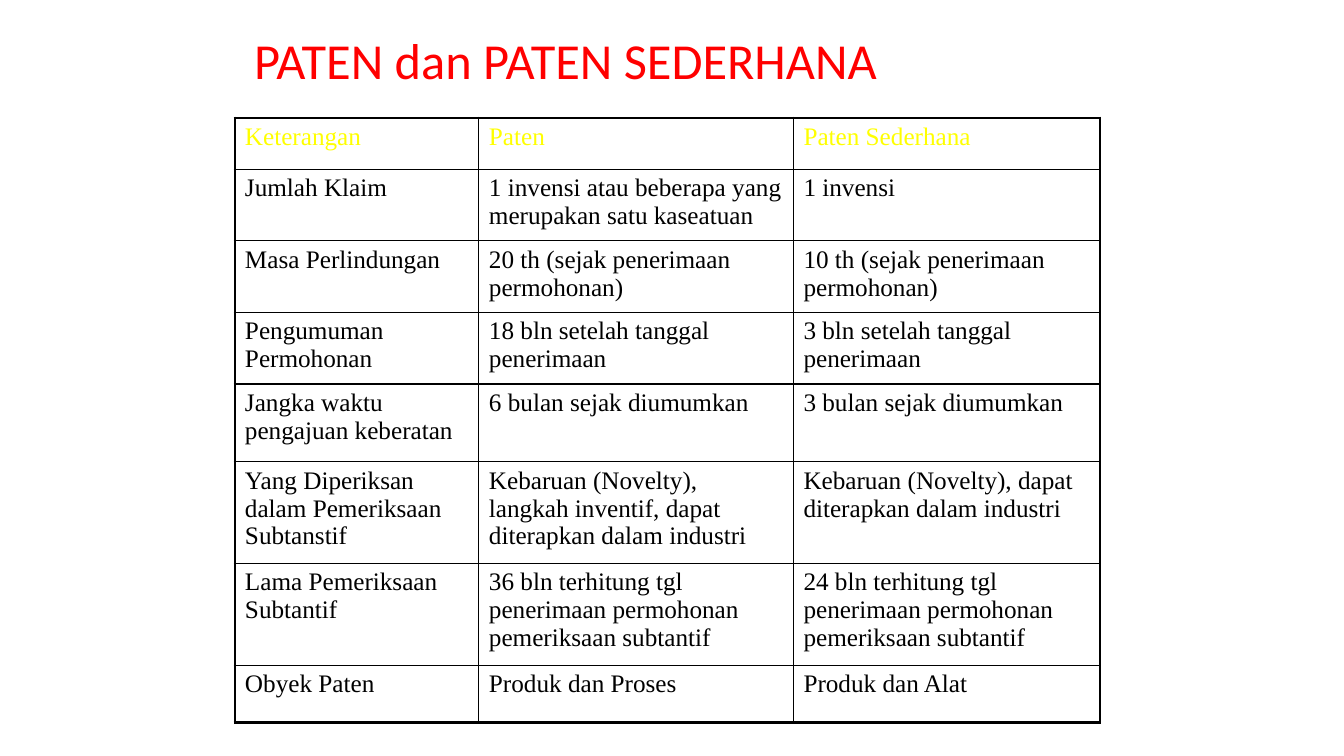
from lxml.etree import SubElement
from pptx import Presentation
from pptx.dml.color import RGBColor
from pptx.enum.text import MSO_ANCHOR, MSO_AUTO_SIZE, PP_ALIGN
from pptx.oxml.ns import qn
from pptx.util import Emu, Pt

PX = 9144  # 100 px to the inch
RED = RGBColor(0xFF, 0x00, 0x00)
YELLOW = RGBColor(0xFF, 0xFF, 0x00)
BLACK = RGBColor(0x00, 0x00, 0x00)

THIN, THICK = 1, 2.25
COLUMN_WIDTHS = [242, 312, 304]
ROW_HEIGHTS = [51, 71, 71, 71, 77, 101, 101, 57]
COMPARISON = [
    ("Keterangan", "Paten", "Paten Sederhana"),
    ("Jumlah Klaim", "1 invensi atau beberapa yang merupakan satu kaseatuan",
     "1 invensi"),
    ("Masa Perlindungan", "20 th (sejak penerimaan permohonan)",
     "10 th (sejak penerimaan permohonan)"),
    ("Pengumuman Permohonan", "18 bln setelah tanggal penerimaan",
     "3 bln setelah tanggal penerimaan"),
    ("Jangka waktu pengajuan keberatan", "6 bulan sejak diumumkan",
     "3 bulan sejak diumumkan"),
    ("Yang Diperiksan dalam Pemeriksaan Subtanstif",
     "Kebaruan (Novelty), langkah inventif, dapat diterapkan dalam industri",
     "Kebaruan (Novelty), dapat diterapkan dalam industri"),
    ("Lama Pemeriksaan Subtantif",
     "36 bln terhitung tgl penerimaan permohonan pemeriksaan subtantif",
     "24 bln terhitung tgl penerimaan permohonan pemeriksaan subtantif"),
    ("Obyek Paten", "Produk dan Proses", "Produk dan Alat"),
]


def px(*lengths):
    return [Emu(length * PX) for length in lengths]


def format_span(span, font, size, colour):
    span.font.name = font
    span.font.size = Pt(size)
    span.font.color.rgb = colour


def set_title(page, text):
    title = page.shapes.title
    title.left, title.top, title.width, title.height = px(242, 0, 850, 125)
    frame = title.text_frame
    frame.text = text
    frame.auto_size = MSO_AUTO_SIZE.NONE
    frame.vertical_anchor = MSO_ANCHOR.MIDDLE
    para = frame.paragraphs[0]
    para.alignment = PP_ALIGN.LEFT
    para.line_spacing = 0.9
    format_span(para.runs[0], "Calibri", 36, RED)


def set_border(cell, side, width):
    """Draw one black cell edge; side is L, R, T or B."""
    properties = cell._tc.get_or_add_tcPr()
    line = SubElement(properties, qn(f"a:ln{side}"), w=str(Pt(width)))
    fill = SubElement(line, qn("a:solidFill"))
    SubElement(fill, qn("a:srgbClr"), val=str(BLACK))


def fill_cell(cell, text, colour):
    cell.fill.background()
    cell.text_frame.text = text
    para = cell.text_frame.paragraphs[0]
    para.space_before = Pt(3.6)
    format_span(para.runs[0], "Times New Roman", 18, colour)


def add_comparison(page):
    row_count, column_count = len(ROW_HEIGHTS), len(COLUMN_WIDTHS)
    place = px(233, 117, sum(COLUMN_WIDTHS), sum(ROW_HEIGHTS))
    table = page.shapes.add_table(row_count, column_count, *place).table
    table.first_row = table.horz_banding = False
    for column, width in zip(table.columns, px(*COLUMN_WIDTHS)):
        column.width = width
    for row, height in zip(table.rows, px(*ROW_HEIGHTS)):
        row.height = height

    for row_index, texts in enumerate(COMPARISON):
        for column_index, text in enumerate(texts):
            cell = table.cell(row_index, column_index)
            outer_edges = {
                "L": column_index == 0,
                "R": column_index == column_count - 1,
                "T": row_index == 0,
                "B": row_index == row_count - 1,
            }
            for side, is_outer in outer_edges.items():
                set_border(cell, side, THICK if is_outer else THIN)
            fill_cell(cell, text, YELLOW if row_index == 0 else BLACK)


def main():
    deck = Presentation()
    deck.slide_width, deck.slide_height = px(1333, 750)
    page = deck.slides.add_slide(deck.slide_layouts[5])
    set_title(page, "PATEN dan PATEN SEDERHANA")
    add_comparison(page)
    deck.save("out.pptx")


if __name__ == "__main__":
    main()
